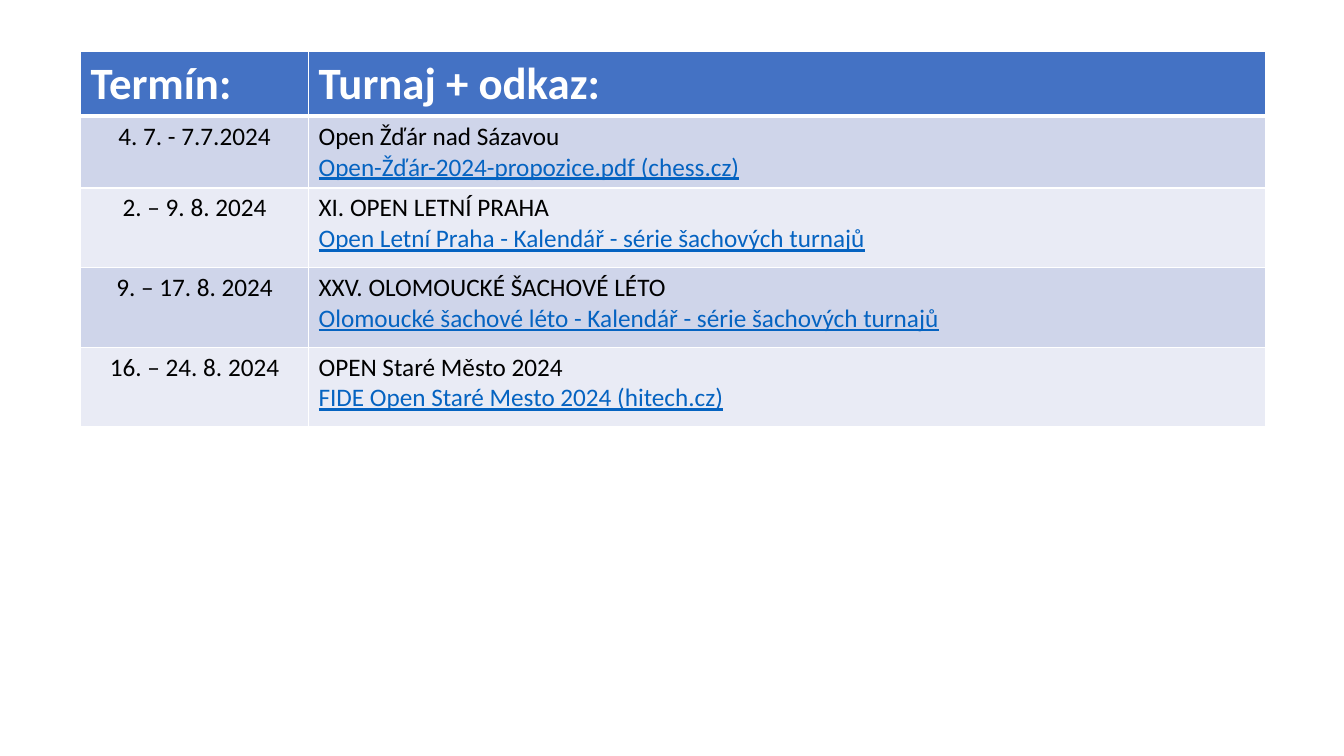
from lxml import etree
from pptx import Presentation
from pptx.dml.color import RGBColor
from pptx.enum.text import PP_ALIGN
from pptx.oxml.ns import qn
from pptx.util import Pt

PX = 9144  # 100 px to the inch
LEFT, CENTER = PP_ALIGN.LEFT, PP_ALIGN.CENTER
WHITE = RGBColor(0xFF, 0xFF, 0xFF)
BLACK = RGBColor(0, 0, 0)
BLUE = RGBColor(0x44, 0x72, 0xC4)
LINK = RGBColor(0x05, 0x63, 0xC1)
BANDS = [RGBColor(0xCF, 0xD5, 0xEA), RGBColor(0xE9, 0xEB, 0xF5)]

HEADS = ["Termín:", "Turnaj + odkaz:"]
EVENTS = [
    ("4. 7. - 7.7.2024", "Open Žďár nad Sázavou",
     "Open-Žďár-2024-propozice.pdf (chess.cz)"),
    ("2. – 9. 8. 2024", "XI. OPEN LETNÍ PRAHA",
     "Open Letní Praha - Kalendář - série šachových turnajů"),
    ("9. – 17. 8. 2024", "XXV. OLOMOUCKÉ ŠACHOVÉ LÉTO",
     "Olomoucké šachové léto - Kalendář - série šachových turnajů"),
    ("16. – 24. 8. 2024", "OPEN Staré Město 2024",
     "FIDE Open Staré Mesto 2024 (hitech.cz)"),
]
COLS = [226, 949]
ROWS = [64, 71, 79, 79, 79]


def add_text(para, text, size, color, align=LEFT, bold=False, line=False):
    para.alignment = align
    run = para.add_run()
    run.text = text
    font = run.font
    font.name, font.size, font.bold = "Calibri", Pt(size), bold
    font.underline = line
    font.color.rgb = color


def style_cell(cell, fill, top, bottom):
    props = cell._tc.get_or_add_tcPr()
    for side, width in zip("LRTB", (1, 1, top, bottom)):
        edge = etree.SubElement(props, qn("a:ln" + side), w=str(Pt(width)))
        paint = etree.SubElement(edge, qn("a:solidFill"))
        etree.SubElement(paint, qn("a:srgbClr"), val=str(WHITE))
    cell.fill.solid()
    cell.fill.fore_color.rgb = fill


deck = Presentation()
deck.slide_width, deck.slide_height = 1333 * PX, 750 * PX
slide = deck.slides.add_slide(deck.slide_layouts[6])

# Table grid
frame = slide.shapes.add_table(len(ROWS), len(COLS), 80 * PX, 51 * PX,
                               sum(COLS) * PX, sum(ROWS) * PX)
table = frame.table
for col, width in zip(table.columns, COLS):
    col.width = width * PX
for row, height in zip(table.rows, ROWS):
    row.height = height * PX

# Header row
for i, head in enumerate(HEADS):
    cell = table.cell(0, i)
    style_cell(cell, BLUE, 1, 3)
    add_text(cell.text_frame.paragraphs[0], head, 32, WHITE, bold=True)

# Tournament rows
for i, (date, name, link) in enumerate(EVENTS):
    when, what = table.cell(i + 1, 0), table.cell(i + 1, 1)
    for cell in (when, what):
        style_cell(cell, BANDS[i % 2], 3 if i == 0 else 1, 1)
    add_text(when.text_frame.paragraphs[0], date, 18, BLACK, CENTER)
    add_text(what.text_frame.paragraphs[0], name, 18, BLACK)
    add_text(what.text_frame.add_paragraph(), link, 18, LINK, line=True)

deck.save("out.pptx")
